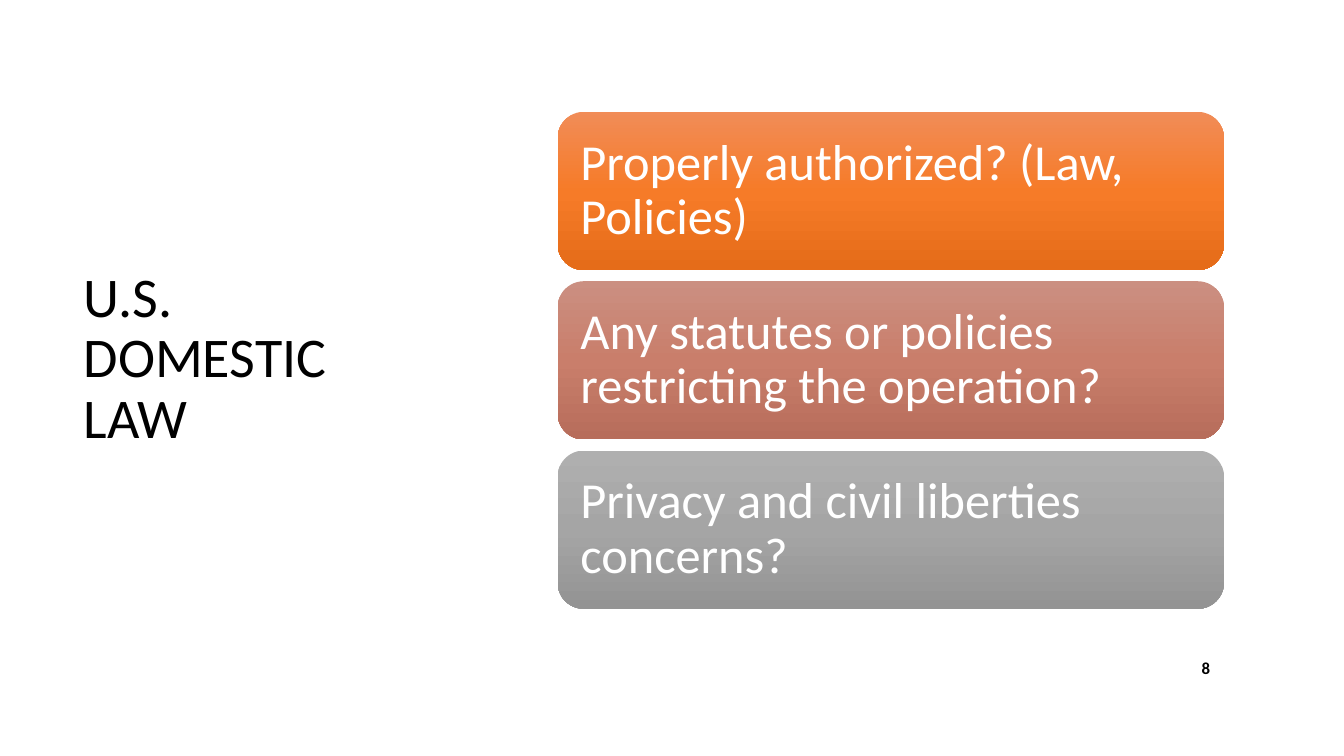
from copy import deepcopy

from pptx import Presentation
from pptx.dml.color import RGBColor
from pptx.enum.shapes import MSO_SHAPE
from pptx.enum.text import MSO_ANCHOR, PP_ALIGN
from pptx.oxml.ns import qn
from pptx.util import Inches, Pt

ROUNDED = MSO_SHAPE.ROUNDED_RECTANGLE
MIDDLE = MSO_ANCHOR.MIDDLE
LEFT = PP_ALIGN.LEFT
RIGHT = PP_ALIGN.RIGHT

FONT = "Calibri"
BLACK = RGBColor(0x00, 0x00, 0x00)
WHITE = RGBColor(0xFF, 0xFF, 0xFF)
ORANGE = (RGBColor(0xF1, 0x8C, 0x57), RGBColor(0xF6, 0x7B, 0x28), RGBColor(0xE5, 0x6C, 0x19))
ROSE = (RGBColor(0xCB, 0x8F, 0x81), RGBColor(0xC9, 0x7E, 0x6B), RGBColor(0xB7, 0x6D, 0x5B))
GRAY = (RGBColor(0xAF, 0xAF, 0xAF), RGBColor(0xA5, 0xA5, 0xA5), RGBColor(0x93, 0x93, 0x93))

QUESTIONS = [
    ("Properly authorized? (Law, Policies)", ORANGE),
    ("Any statutes or policies restricting the operation?", ROSE),
    ("Privacy and civil liberties concerns?", GRAY),
]
CARD_GAP = 0.11
CARD_INSET = 0.15


def write_text(shape, text, size, color, align=LEFT, bold=False, line_spacing=None):
    frame = shape.text_frame
    frame.text = text
    frame.word_wrap = True
    frame.vertical_anchor = MIDDLE
    para = frame.paragraphs[0]
    para.alignment = align
    para.line_spacing = line_spacing
    font = para.runs[0].font
    font.name = FONT
    font.size = Pt(size)
    font.bold = bold
    font.color.rgb = color


def fill_downward(shape, colors):
    shape.fill.gradient()
    shape.fill.gradient_angle = 270
    stop_list = shape.element.spPr.find(".//" + qn("a:gsLst"))
    stop_list.insert(1, deepcopy(stop_list[0]))
    for index, (stop, color) in enumerate(zip(shape.fill.gradient_stops, colors)):
        stop.position = index / (len(colors) - 1)
        stop.color.rgb = color


def add_title(slide, left, top, width, height):
    title = slide.shapes.title
    title.left, title.top = Inches(left), Inches(top)
    title.width, title.height = Inches(width), Inches(height)
    write_text(title, "U.S. DOMESTIC LAW", 40, BLACK, line_spacing=0.9)


def add_question_cards(slide, left, top, width, height):
    count = len(QUESTIONS)
    card_height = (height - CARD_GAP * (count - 1)) / count
    for index, (question, colors) in enumerate(QUESTIONS):
        card_top = top + index * (card_height + CARD_GAP)
        card = slide.shapes.add_shape(
            ROUNDED, Inches(left), Inches(card_top), Inches(width), Inches(card_height)
        )
        card.shadow.inherit = False
        card.line.fill.background()
        fill_downward(card, colors)
        write_text(card, question, 36, WHITE, line_spacing=0.9)
        frame = card.text_frame
        frame.margin_left = frame.margin_right = Inches(CARD_INSET)
        frame.margin_top = frame.margin_bottom = Inches(CARD_INSET)


def add_page_number(slide, left, top, width, height):
    box = slide.shapes.add_textbox(Inches(left), Inches(top), Inches(width), Inches(height))
    write_text(box, "8", 12, BLACK, align=RIGHT, bold=True)
    box.text_frame.paragraphs[0].space_after = Pt(6)


def main():
    deck = Presentation()
    deck.slide_width = Inches(13.33)
    deck.slide_height = Inches(7.5)
    slide = deck.slides.add_slide(deck.slide_layouts.get_by_name("Title Only"))
    add_title(slide, 0.73, 1.56, 3.31, 4.02)
    add_page_number(slide, 11.5, 6.43, 0.6, 0.4)
    add_question_cards(slide, 5.53, 1.11, 6.61, 4.93)
    deck.save("out.pptx")


if __name__ == "__main__":
    main()
